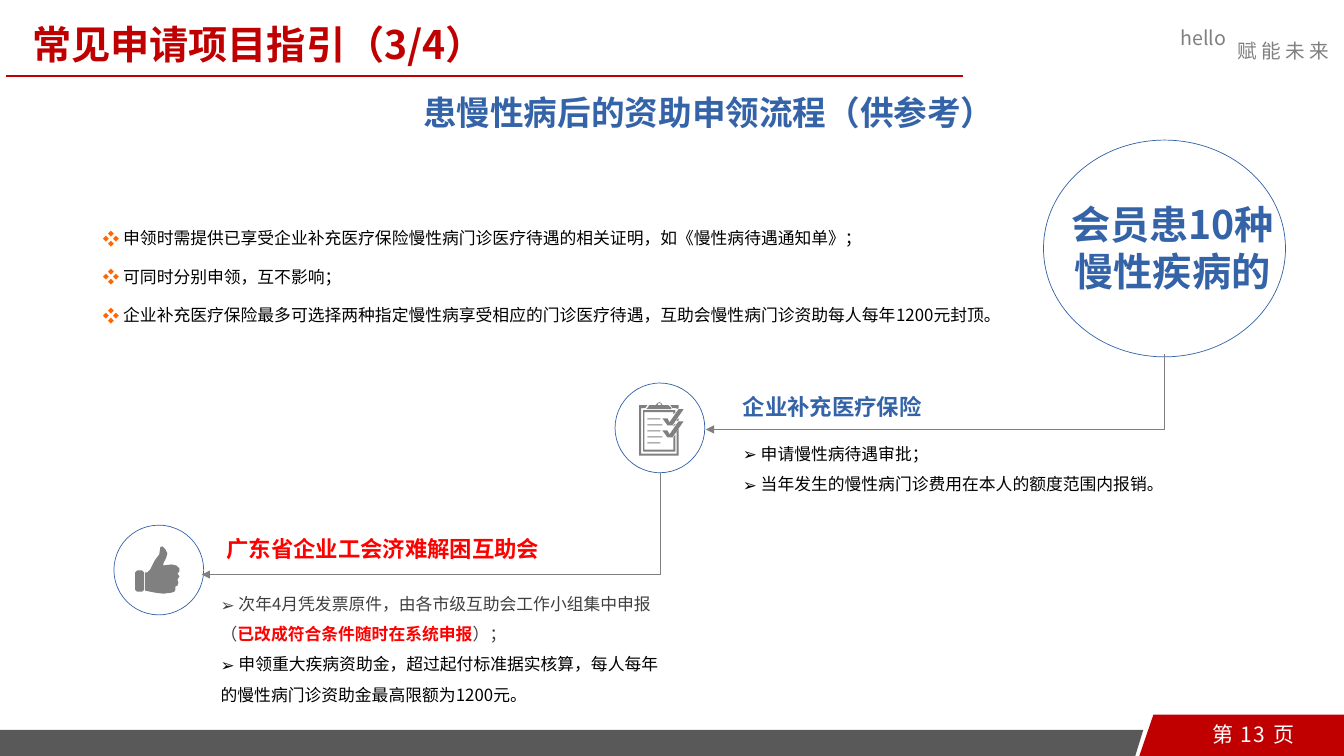
"""Build the slide on the chronic illness aid process."""
from lxml import etree
from pptx import Presentation
from pptx.dml.color import RGBColor
from pptx.enum.shapes import MSO_CONNECTOR, MSO_SHAPE
from pptx.enum.text import MSO_AUTO_SIZE, PP_ALIGN
from pptx.oxml.ns import qn
from pptx.util import Inches, Pt

LEFT, CENTER = PP_ALIGN.LEFT, PP_ALIGN.CENTER
GROW = MSO_AUTO_SIZE.SHAPE_TO_FIT_TEXT
OVAL, STRAIGHT = MSO_SHAPE.OVAL, MSO_CONNECTOR.STRAIGHT
FACE = "Noto Sans CJK SC"
WHITE = RGBColor(255, 255, 255)
BLACK = RGBColor(0, 0, 0)
INK = RGBColor(0x40, 0x40, 0x40)
SLATE = RGBColor(0x59, 0x59, 0x59)
DIM = RGBColor(0x7F, 0x7F, 0x7F)
GRAY = RGBColor(0x80, 0x80, 0x80)
CRIMSON = RGBColor(0xC0, 0, 0)
RED = RGBColor(255, 0, 0)
BLUE = RGBColor(0x35, 0x63, 0xA8)
ORANGE = RGBColor(0xFF, 0x66, 0)

deck = Presentation()
deck.slide_width, deck.slide_height = Inches(13.33), Inches(7.5)
slide = deck.slides.add_slide(deck.slide_layouts[6])
shapes = slide.shapes


def write(paras, box, size=12, color=BLACK, bold=False, align=LEFT, wrap=True,
          track=0, mark=None, tint=None, lead=None, gap=0):
    """Add a text box; a paragraph is a string or a list of styled runs."""
    frame = shapes.add_textbox(*map(Inches, box)).text_frame
    frame.word_wrap = wrap
    frame.auto_size = GROW
    for i, para in enumerate(paras):
        p = frame.paragraphs[0] if i == 0 else frame.add_paragraph()
        if mark:
            props = p._p.get_or_add_pPr()
            if tint:
                hue = etree.SubElement(props, qn("a:buClr"))
                etree.SubElement(hue, qn("a:srgbClr"), val=str(tint))
            etree.SubElement(props, qn("a:buFont"), typeface=FACE)
            etree.SubElement(props, qn("a:buChar"), char=mark)
        p.alignment = align
        if lead:
            p.line_spacing = lead
        if i and gap:
            p.space_before = Pt(gap)
        runs = [(para, color, bold)] if isinstance(para, str) else para
        for text, shade, heavy in runs:
            run = p.add_run()
            run.text = text
            font = run.font
            font.name, font.size, font.bold = FACE, Pt(size), heavy
            font.color.rgb = shade
            props = run._r.get_or_add_rPr()
            etree.SubElement(props, qn("a:ea"), typeface=FACE)
            if track:
                props.set("spc", str(track * 100))


def outline(paths, color):
    """Fill closed paths given in hundredths of an inch."""
    pen = shapes.build_freeform(*paths[0][0], scale=Inches(0.01))
    pen.add_line_segments(paths[0][1:])
    for path in paths[1:]:
        pen.move_to(*path[0])
        pen.add_line_segments(path[1:])
    shape = pen.convert_to_shape()
    shape.shadow.inherit = False
    shape.fill.solid()
    shape.fill.fore_color.rgb = color
    shape.line.fill.background()


outline([[(0, 750), (1126, 750), (1134, 724), (0, 724)]], SLATE)
outline([[(1144, 709), (1130, 750), (1333, 750), (1333, 709)]], CRIMSON)
write(["第 13 页"], (11.82, 7.11, 1.22, 0.37), size=15, color=WHITE,
      align=CENTER, track=1)
write(["hello"], (11.61, 0.21, 0.66, 0.34), size=14, color=DIM, wrap=False)
write(["赋能未来"], (12.18, 0.34, 1.16, 0.34), size=14, color=GRAY,
      wrap=False, track=3)

write(["常见申请项目指引（3/4）"], (0.22, 0.15, 9.47, 0.57), size=28,
      color=CRIMSON, bold=True)
write(["患慢性病后的资助申领流程（供参考）"], (4.02, 0.86, 6.02, 0.5), size=24,
      color=BLUE, bold=True, align=CENTER)
write(["企业补充医疗保险"], (7.27, 3.85, 3.18, 0.37), size=16, color=BLUE, bold=True)
write([" 申请慢性病待遇审批；", " 当年发生的慢性病门诊费用在本人的额度范围内报销。"],
      (7.27, 4.25, 4.44, 0.71), mark="➢", lead=1.5)
write(["会员患10种慢性疾病的"], (10.35, 1.94, 2.56, 1.04), size=28, color=BLUE,
      bold=True, align=CENTER)
write([[(" 次年4月凭发票原件，由各市级互助会工作小组集中申报（", INK, False),
        ("已改成符合条件随时在系统申报", RED, True), ("）；", INK, False)],
       " 申领重大疾病资助金，超过起付标准据实核算，每人每年的慢性病门诊资助金最高限额为1200元。"],
      (2.09, 5.74, 4.65, 1.31), mark="➢", lead=1.5)
write([" 申领时需提供已享受企业补充医疗保险慢性病门诊医疗待遇的相关证明，如《慢性病待遇通知单》；",
       " 可同时分别申领，互不影响；",
       " 企业补充医疗保险最多可选择两种指定慢性病享受相应的门诊医疗待遇，互助会慢性病门诊资助每人每年1200元封顶。"],
      (0.92, 2.11, 9.05, 1.21), mark="❖", tint=ORANGE, lead=1.5, gap=6)
write(["广东省企业工会济难解困互助会"], (2.15, 5.26, 3.87, 0.37), size=16,
      color=RED, bold=True)

for box in [(6.1, 3.8, 0.89, 0.89), (1.13, 5.21, 0.89, 0.89), (10.35, 1.39, 2.4, 2.15)]:
    ring = shapes.add_shape(OVAL, *map(Inches, box))
    ring.shadow.inherit = False
    ring.fill.background()
    ring.line.color.rgb = BLUE
    ring.line.width = Pt(0.5)

board = [
    [(671, 450), (636, 450), (636, 405), (640, 405), (642, 402), (634, 402),
     (634, 452), (673, 452), (673, 426), (671, 429)],
    [(668, 446), (639, 446), (639, 409), (668, 409), (668, 411), (670, 409),
     (670, 407), (638, 407), (638, 448), (670, 448), (670, 431), (668, 434)],
    [(671, 418), (673, 417), (673, 415), (671, 417)],
    [(670, 420), (668, 422), (668, 423), (670, 421)],
    [(673, 405), (673, 402), (665, 402), (667, 405), (671, 405), (671, 406)],
    [(642, 405), (644, 402), (650, 402), (652, 400), (654, 399), (656, 400),
     (657, 402), (663, 402), (666, 405), (666, 406), (641, 406)],
    [(652, 402), (656, 402), (655, 400), (653, 400)],
]
for i in range(5):
    top, right = 415 + 6 * i, 657 if i % 2 else 655
    board.append([(642, top), (right, top), (right, top + 1.5), (642, top + 1.5)])
tick = [(678, 406), (667, 422), (662, 422), (657, 415), (662, 415), (664, 419), (673, 406)]
for drop in (0, 12):
    board.append([(x, y + drop) for x, y in tick])
thumb = [
    [(176, 569), (178, 572), (176, 575), (177, 578), (176, 581), (174, 582),
     (174, 585), (173, 587), (170, 588), (162, 589), (154, 588), (144, 586),
     (144, 568), (146, 568), (149, 565), (153, 557), (155, 554), (158, 550),
     (159, 543), (161, 542), (164, 545), (166, 549), (165, 553), (162, 559),
     (162, 561), (170, 560), (175, 561), (178, 564), (178, 567)],
    [(143, 585), (143, 568), (141, 566), (136, 566), (134, 568), (134, 585),
     (136, 587), (141, 587)],
]
for icon in (board, thumb):
    outline(icon, GRAY)

for start, end, color, width, arrow in [
        ((0.06, 0.75), (9.55, 0.75), CRIMSON, 1.5, False),
        ((11.55, 3.51), (11.55, 4.26), GRAY, 0.5, False),
        ((11.55, 4.26), (7, 4.26), GRAY, 0.5, True),
        ((6.55, 4.69), (6.55, 5.7), GRAY, 0.5, False),
        ((6.55, 5.7), (2, 5.7), GRAY, 0.5, True)]:
    link = shapes.add_connector(STRAIGHT, *map(Inches, start + end))
    link.line.color.rgb = color
    link.line.width = Pt(width)
    if arrow:
        etree.SubElement(link.line._get_or_add_ln(), qn("a:tailEnd"), type="triangle")
    etree.SubElement(link._element.spPr, qn("a:effectLst"))

deck.save("out.pptx")
